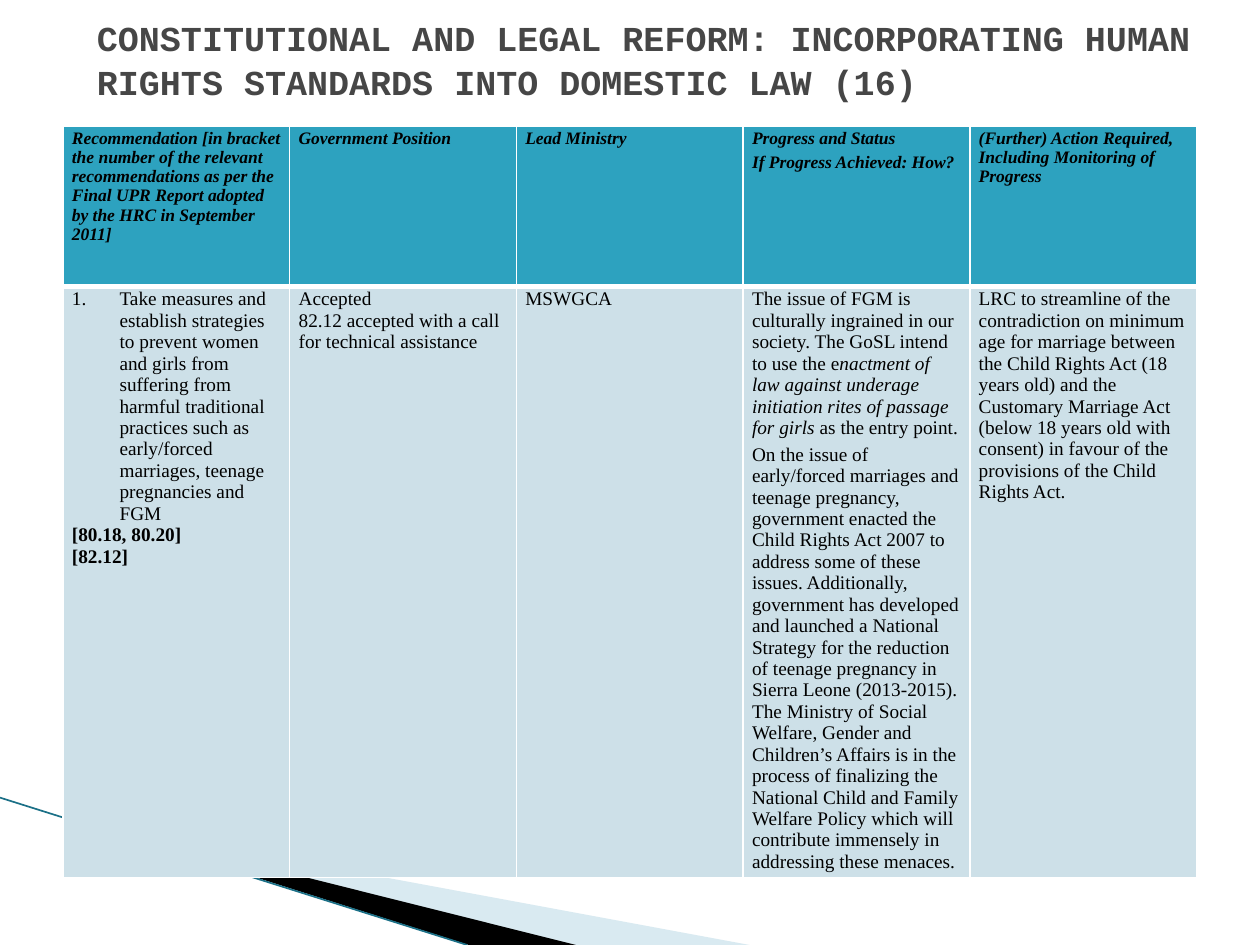
from pptx import Presentation
from pptx.dml.color import RGBColor
from pptx.enum.shapes import MSO_CONNECTOR
from pptx.enum.text import MSO_ANCHOR, MSO_AUTO_SIZE, PP_ALIGN
from pptx.oxml.ns import qn
from pptx.util import Cm, Pt
from lxml import etree

LEFT = PP_ALIGN.LEFT
TOP, MIDDLE = MSO_ANCHOR.TOP, MSO_ANCHOR.MIDDLE
NO_FIT = MSO_AUTO_SIZE.NONE
STRAIGHT = MSO_CONNECTOR.STRAIGHT


class Theme:
    title_font, table_font = "Courier New", "Times New Roman"
    title_size, header_size, body_size = 20, 10, 11
    title, text, border = "464646", "000000", "FFFFFF"
    header_fill, body_fill = "2DA2BF", "CDE0E8"
    pale_wedge, dark_wedge, edge = "A0CBDC", "000000", "1B7087"


def add_text(para, text, font=Theme.table_font, size=Theme.body_size,
             color=Theme.text, bold=False, italic=False):
    span = para.add_run()
    span.text = text
    span.font.name, span.font.size = font, Pt(size)
    span.font.bold, span.font.italic = bold, italic
    span.font.color.rgb = RGBColor.from_string(color)


def add_border(cell, side, width):
    line = etree.SubElement(cell._tc.get_or_add_tcPr(), qn(f"a:ln{side}"), w=str(Pt(width)))
    fill = etree.SubElement(line, qn("a:solidFill"))
    etree.SubElement(fill, qn("a:srgbClr"), val=Theme.border)


deck = Presentation()
deck.slide_width, deck.slide_height = Cm(25.4), Cm(19.05)
page = deck.slides.add_slide(deck.slide_layouts[5])

# Wedges in the bottom left corner
wedges = [
    (Theme.pale_wedge, 40, [(1.4, 16.51), (15.11, 19.05), (11.58, 19.05)]),
    (Theme.dark_wedge, 100, [(1.35, 16.48), (11.61, 19.05), (9.45, 19.05)]),
]
for color, opacity, corners in wedges:
    points = [(Cm(x), Cm(y)) for x, y in corners]
    builder = page.shapes.build_freeform(*points[0])
    builder.add_line_segments(points[1:], close=True)
    wedge = builder.convert_to_shape()
    wedge.shadow.inherit = False
    wedge.line.fill.background()
    wedge.fill.solid()
    wedge.fill.fore_color.rgb = RGBColor.from_string(color)
    if opacity < 100:
        tint = wedge._element.spPr.find(f"{qn('a:solidFill')}/{qn('a:srgbClr')}")
        etree.SubElement(tint, qn("a:alpha"), val=str(opacity * 1000))

edge = page.shapes.add_connector(STRAIGHT, Cm(0), Cm(16.08), Cm(9.42), Cm(19.05))
edge.line.color.rgb = RGBColor.from_string(Theme.edge)
edge.line.width = Pt(0.95)
etree.SubElement(edge._element.spPr, qn("a:effectLst"))

# Title
title = page.shapes.title
title.left, title.top, title.width, title.height = Cm(1.7), Cm(0), Cm(22.86), Cm(2.34)
title.text_frame.word_wrap = True
title.text_frame.auto_size = NO_FIT
title.text_frame.vertical_anchor = MIDDLE
para = title.text_frame.paragraphs[0]
para.alignment = LEFT
para.line_spacing = 1.06
add_text(para, "CONSTITUTIONAL AND LEGAL REFORM: INCORPORATING HUMAN RIGHTS STANDARDS INTO DOMESTIC LAW (16)",
         font=Theme.title_font, size=Theme.title_size, color=Theme.title, bold=True)

# Table wording: each cell is a list of paragraphs
header = [
    ["Recommendation [in bracket the number of the relevant recommendations as per "
     "the Final UPR Report adopted by the HRC in September 2011]"],
    ["Government Position"],
    ["Lead Ministry"],
    ["Progress and Status", "If Progress Achieved: How?"],
    ["(Further) Action Required, Including Monitoring of Progress"],
]
measures = ("Take measures and establish strategies to prevent women and girls from suffering from "
            "harmful traditional practices such as early/forced marriages, teenage pregnancies and FGM")
references = ["[80.18, 80.20]", "[82.12]"]
entry_point = "nactment of law against underage initiation rites of passage for girls"
body = [
    [measures, *references],
    ["Accepted", "82.12 accepted with a call for technical assistance"],
    ["MSWGCA"],
    ["The issue of FGM is culturally ingrained in our society. The GoSL intend to use the e"
     + entry_point + " as the entry point.",
     "On the issue of early/forced marriages and teenage pregnancy, government enacted the Child "
     "Rights Act 2007 to address some of these issues. Additionally, government has developed and "
     "launched a National Strategy for the reduction of teenage pregnancy in Sierra Leone "
     "(2013-2015). The Ministry of Social Welfare, Gender and Children’s Affairs is in the process "
     "of finalizing the National Child and Family Welfare Policy which will contribute immensely "
     "in addressing these menaces."],
    ["LRC to streamline of the contradiction on minimum age for marriage between the Child Rights "
     "Act (18 years old) and the Customary Marriage Act (below 18 years old with consent) in "
     "favour of the provisions of the Child Rights Act."],
]
rows = [
    # texts, height, fill, top border, bottom border, size
    (header, 3.23, Theme.header_fill, 1, 3, Theme.header_size),
    (body, 11.9, Theme.body_fill, 3, 1, Theme.body_size),
]

# Table
table = page.shapes.add_table(2, 5, Cm(1.27), Cm(2.54), Cm(22.86), Cm(15.13)).table
table.horz_banding = False
for column in table.columns:
    column.width = Cm(4.57)

for row, (texts, height, fill, top, bottom, size) in enumerate(rows):
    table.rows[row].height = Cm(height)
    is_header = texts is header
    for column, paragraphs in enumerate(texts):
        cell = table.cell(row, column)
        for side, width in (("L", 1), ("R", 1), ("T", top), ("B", bottom)):
            add_border(cell, side, width)
        cell.fill.solid()
        cell.fill.fore_color.rgb = RGBColor.from_string(fill)
        cell.margin_left = cell.margin_right = Cm(0.18)
        cell.margin_top, cell.margin_bottom = Cm(0.05), Cm(0.1)
        cell.vertical_anchor = TOP

        for index, text in enumerate(paragraphs):
            frame = cell.text_frame
            para = frame.add_paragraph() if index else frame.paragraphs[0]
            para.alignment = LEFT
            if column >= 3:
                para.space_after = Pt(3)
            if column == 0 and not is_header:
                properties = para._p.get_or_add_pPr()
                properties.set("marL", str(Cm(0.96)))
                properties.set("indent", str(-Cm(0.96)))
                if text == measures:
                    etree.SubElement(properties, qn("a:buAutoNum"), type="arabicPeriod")
            # The quoted law is the only italic part of the body
            before, quote, after = text.partition(entry_point)
            for part in filter(None, (before, quote, after)):
                add_text(para, part, size=size, bold=is_header or text in references,
                         italic=is_header or part == entry_point)

deck.save("out.pptx")
